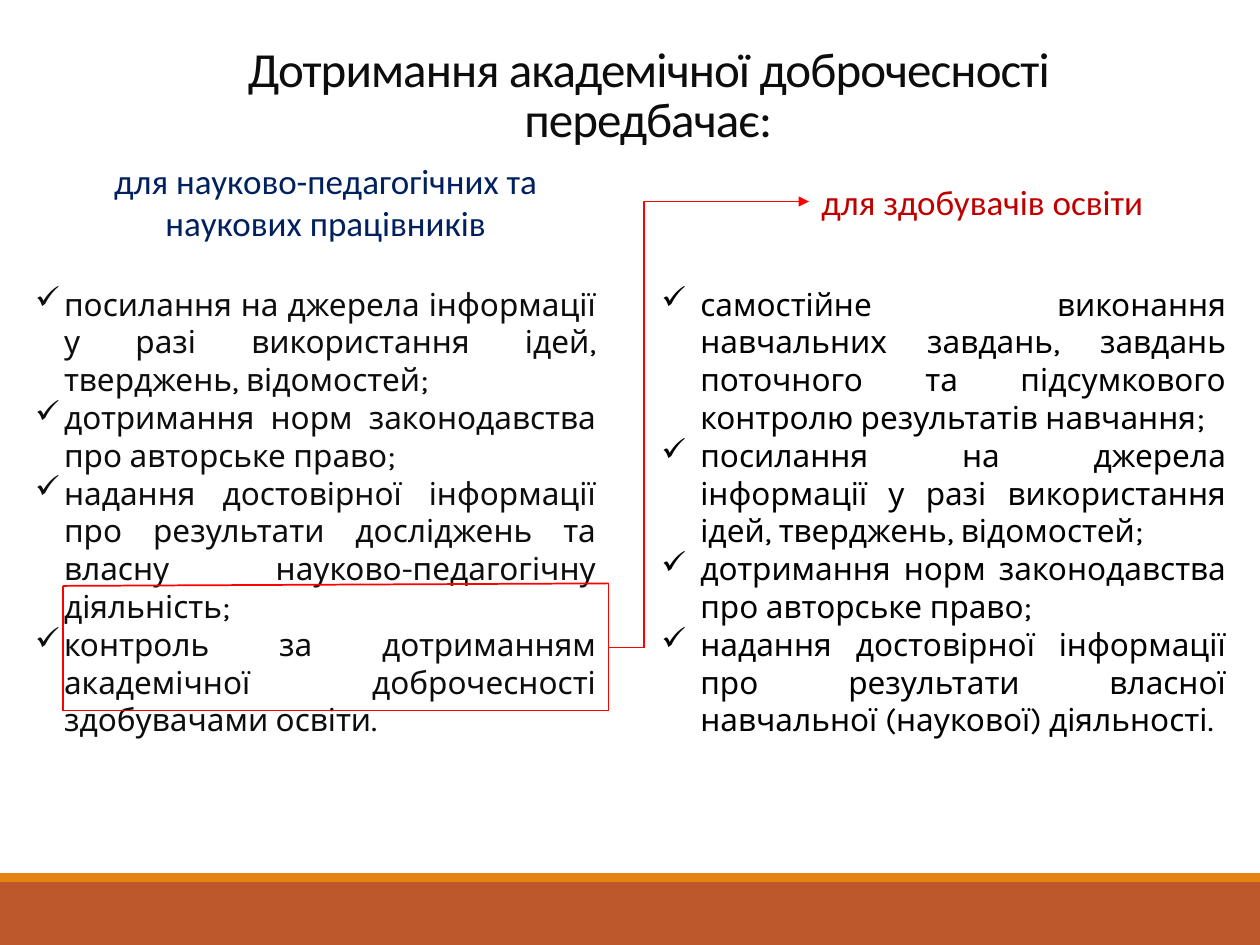
from dataclasses import dataclass
from itertools import pairwise

from lxml.etree import SubElement
from pptx import Presentation
from pptx.dml.color import RGBColor as Rgb
from pptx.enum.shapes import MSO_CONNECTOR as Link, MSO_SHAPE as Kind
from pptx.enum.text import MSO_ANCHOR as Anchor, MSO_AUTO_SIZE as Fit, PP_ALIGN as Align
from pptx.oxml.ns import qn
from pptx.util import Inches, Pt


@dataclass(frozen=True)
class Theme:
    head: str = "Calibri"
    body: str = "Karla"
    title: int = 28
    label: int = 20
    text: int = 18
    ink: str = "0D0D0D"
    black: str = "000000"
    navy: str = "002060"
    crimson: str = "C00000"
    red: str = "FF0000"
    rust: str = "BD582C"
    amber: str = "E48312"


THEME = Theme()
WIDE, HIGH = Inches(10), Inches(7.5)
COLS, ROWS = 100, 75
COL, ROW = WIDE / COLS, HIGH / ROWS

STAFF = [
    "посилання на джерела інформації у разі використання ідей, тверджень, відомостей;",
    "дотримання норм законодавства про авторське право;",
    "надання достовірної інформації про результати досліджень та власну "
    "науково-педагогічну діяльність;",
    "контроль за дотриманням академічної доброчесності здобувачами освіти.",
]
PUPILS = [
    "самостійне виконання навчальних завдань, завдань поточного та підсумкового "
    "контролю результатів навчання;",
    *STAFF[:2],
    "надання достовірної інформації про результати власної навчальної (наукової) діяльності.",
]


def grid(*cells):
    """Turn column, row, column, row... into slide lengths."""
    return [round(n * (ROW if i % 2 else COL)) for i, n in enumerate(cells)]


def put(item, **values):
    for name, value in values.items():
        setattr(item, name, value)


def style(para, text, face, size, color, align):
    para.alignment = align
    run = para.add_run()
    run.text = text
    put(run.font, name=face, size=Pt(size))
    run.font.color.rgb = Rgb.from_string(color)
    return run


def add_title(slide, text, cells):
    shape = slide.shapes.title
    put(shape, **dict(zip(("left", "top", "width", "height"), grid(*cells))))
    put(shape.text_frame, vertical_anchor=Anchor.BOTTOM, word_wrap=True, auto_size=Fit.NONE)
    para = shape.text_frame.paragraphs[0]
    para.line_spacing = 0.85
    run = style(para, text, THEME.head, THEME.title, THEME.ink, Align.CENTER)
    run.font._element.set("spc", "-50")


def add_box(slide, cells, wrap=True):
    frame = slide.shapes.add_textbox(*grid(*cells)).text_frame
    put(frame, word_wrap=wrap, auto_size=Fit.SHAPE_TO_FIT_TEXT)
    return frame


def add_label(slide, text, cells, color, align, wrap=True):
    frame = add_box(slide, cells, wrap)
    style(frame.paragraphs[0], text, THEME.head, THEME.label, color, align)


def add_list(slide, items, cells, color, dent):
    frame = add_box(slide, cells)
    for i, text in enumerate(items):
        para = frame.add_paragraph() if i else frame.paragraphs[0]
        style(para, text, THEME.body, THEME.text, color, Align.JUSTIFY)
        props = para._p.get_or_add_pPr()
        step = round(dent * COL)
        props.set("marL", str(step))
        props.set("indent", str(-step))
        SubElement(props, qn("a:buChar")).set("char", "✓")


def add_band(slide, cells, color):
    shape = slide.shapes.add_shape(Kind.RECTANGLE, *grid(*cells))
    shape.shadow.inherit = False
    shape.fill.solid()
    shape.fill.fore_color.rgb = Rgb.from_string(color)
    shape.line.fill.background()


def add_line(slide, start, end, kind=Link.STRAIGHT):
    line = slide.shapes.add_connector(kind, *grid(*start, *end))
    line.line.color.rgb = Rgb.from_string(THEME.red)
    line.line.width = Pt(1)
    SubElement(line._element.spPr, qn("a:effectLst"))
    return line


def add_elbow(slide, start, end):
    """Draw a one-bend arrow that goes up from start, then right to end."""
    (x1, y1), (x2, y2) = start, end
    mid_x, mid_y = (x1 + x2) / 2, (y1 + y2) / 2
    # A quarter turn swaps the sides of the frame around its centre.
    half_w, half_h = (y1 - y2) / 2, (x2 - x1) / 2
    line = add_line(slide, (mid_x + half_w, mid_y + half_h),
                    (mid_x - half_w, mid_y - half_h), Link.ELBOW)
    props = line._element.spPr
    props.find(qn("a:xfrm")).set("rot", str(90 * 60000))
    props.find(qn("a:prstGeom")).set("prst", "bentConnector2")
    SubElement(props.find(qn("a:ln")), qn("a:tailEnd")).set("type", "triangle")


def add_frame(slide, corners):
    for start, end in pairwise([*corners, corners[0]]):
        add_line(slide, start, end)


def main():
    deck = Presentation()
    put(deck, slide_width=WIDE, slide_height=HIGH)
    slide = deck.slides.add_slide(deck.slide_layouts[5])

    add_band(slide, (0, 70, COLS, 5), THEME.rust)
    add_band(slide, (0, 69.3, COLS, 0.7), THEME.amber)
    add_title(slide, "Дотримання академічної доброчесності передбачає:",
              (10.2, 7.8, 82.5, 4.4))
    add_label(slide, "для науково-педагогічних та наукових працівників",
              (8, 12.2, 35.7, 7.7), THEME.navy, Align.CENTER)
    add_label(slide, "для здобувачів освіти", (64.2, 13.8, 27.8, 4.4),
              THEME.crimson, Align.LEFT, wrap=False)
    add_list(slide, STAFF, (1.8, 22.1, 46.5, 34.3), THEME.ink, 2.3)

    turn = (51.1, 51.4)
    add_elbow(slide, turn, (64.2, 16))
    add_line(slide, turn, (48.3, 51.4))
    add_frame(slide, [(5, 46.5), (48.3, 46.3), (48.3, 56.4), (5, 56.4)])
    add_list(slide, PUPILS, (51.5, 22.1, 46.8, 37.4), THEME.black, 3.1)

    deck.save("out.pptx")


if __name__ == "__main__":
    main()
